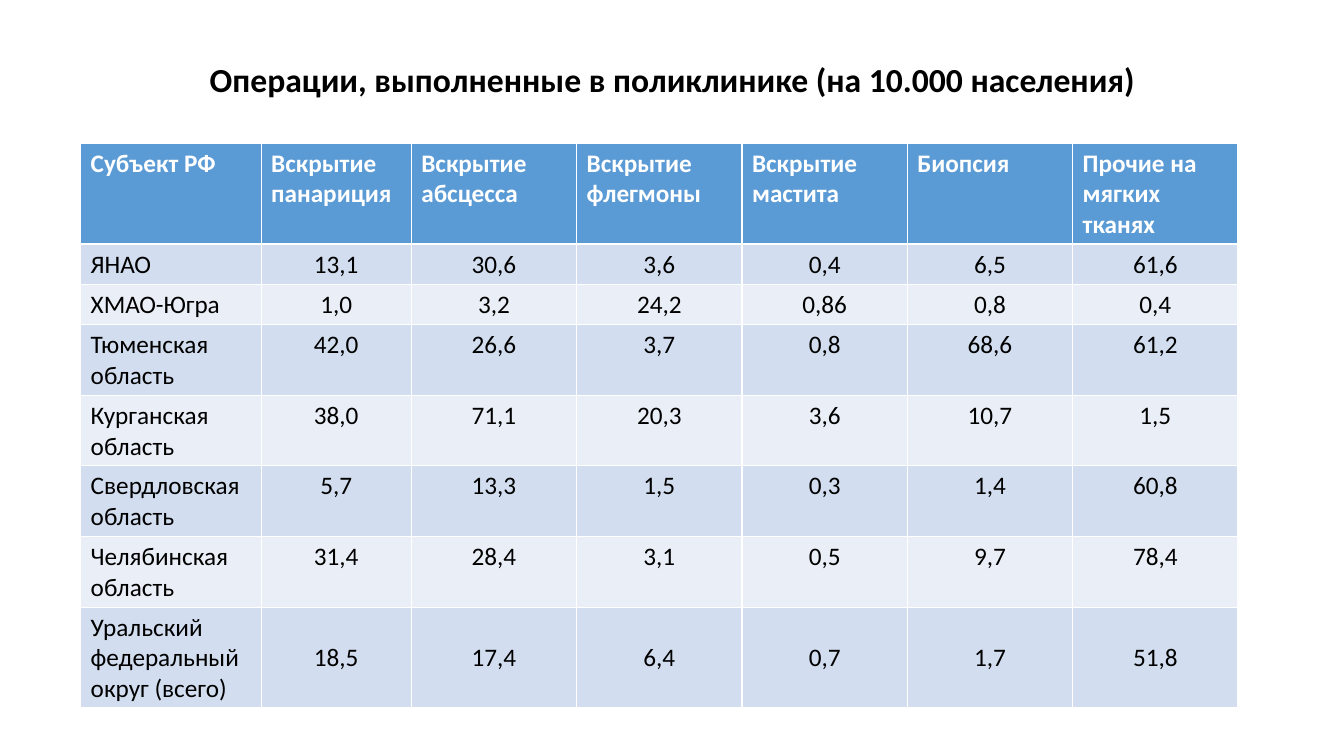
import pptx
import pptx.util
import pptx.dml.color
import pptx.enum.text

Inches = pptx.util.Inches
Pt = pptx.util.Pt
Color = pptx.dml.color.RGBColor
Align = pptx.enum.text.PP_ALIGN
Anchor = pptx.enum.text.MSO_ANCHOR

BLACK = Color(0x00, 0x00, 0x00)
WHITE = Color(0xFF, 0xFF, 0xFF)
BLUE = Color(0x5B, 0x9B, 0xD5)
BANDS = (Color(0xD2, 0xDE, 0xEF), Color(0xEA, 0xEF, 0xF7))

TITLE = "Операции, выполненные в поликлинике (на 10.000 населения)"
HEAD = ("Субъект РФ", "Вскрытие панариция", "Вскрытие абсцесса",
        "Вскрытие флегмоны", "Вскрытие мастита", "Биопсия",
        "Прочие на мягких тканях")
ROWS = (
    ("ЯНАО", "13,1", "30,6", "3,6", "0,4", "6,5", "61,6"),
    ("ХМАО-Югра", "1,0", "3,2", "24,2", "0,86", "0,8", "0,4"),
    ("Тюменская область", "42,0", "26,6", "3,7", "0,8", "68,6", "61,2"),
    ("Курганская область", "38,0", "71,1", "20,3", "3,6", "10,7", "1,5"),
    ("Свердловская область", "5,7", "13,3", "1,5", "0,3", "1,4", "60,8"),
    ("Челябинская область", "31,4", "28,4", "3,1", "0,5", "9,7", "78,4"),
    ("Уральский федеральный округ (всего)",
     "18,5", "17,4", "6,4", "0,7", "1,7", "51,8"),
)
WIDTHS = (1.79, 1.49) + (1.64,) * 5
LINES = (3, 1, 1, 2, 2, 2, 2, 3)


class Deck:
    def __init__(self):
        self.deck = pptx.Presentation()
        self.deck.slide_width = Inches(13.33)
        self.deck.slide_height = Inches(7.5)
        self.slide = self.deck.slides.add_slide(self.deck.slide_layouts[6])
        self.font = {"name": "Calibri", "size": Pt(18), "bold": False}

    def label(self, frame, text, color, align, **style):
        par = frame.paragraphs[0]
        par.alignment = align
        run = par.add_run()
        run.text = text
        for key, value in {**self.font, **style}.items():
            setattr(run.font, key, value)
        run.font.color.rgb = color
        return par

    def title(self, text, *place):
        box = self.slide.shapes.add_textbox(*map(Inches, place))
        frame = box.text_frame
        frame.word_wrap = True
        frame.vertical_anchor = Anchor.MIDDLE
        par = self.label(frame, text, BLACK, Align.CENTER, size=Pt(24), bold=True)
        par.line_spacing = 0.9

    def table(self, rows, left, top):
        heights = [0.1 + 0.3 * count for count in LINES]
        place = map(Inches, (left, top, sum(WIDTHS), sum(heights)))
        grid = self.slide.shapes.add_table(len(rows), len(WIDTHS), *place).table
        for col, width in zip(grid.columns, WIDTHS):
            col.width = Inches(width)
        for row, height in zip(grid.rows, heights):
            row.height = Inches(height)
        for i, row in enumerate(rows):
            for j, text in enumerate(row):
                self.cell(grid.cell(i, j), text, i, j)
        for j in range(1, len(WIDTHS)):
            grid.cell(len(rows) - 1, j).vertical_anchor = Anchor.MIDDLE

    def cell(self, cell, text, i, j):
        head = i == 0
        cell.fill.solid()
        cell.fill.fore_color.rgb = BLUE if head else BANDS[(i - 1) % 2]
        align = Align.LEFT if head or j == 0 else Align.CENTER
        self.label(cell.text_frame, text, WHITE if head else BLACK, align, bold=head)


def main():
    page = Deck()
    page.title(TITLE, 0.92, 0.4, 11.5, 0.82)
    page.table((HEAD,) + ROWS, 0.8, 1.42)
    page.deck.save("out.pptx")


if __name__ == "__main__":
    main()
